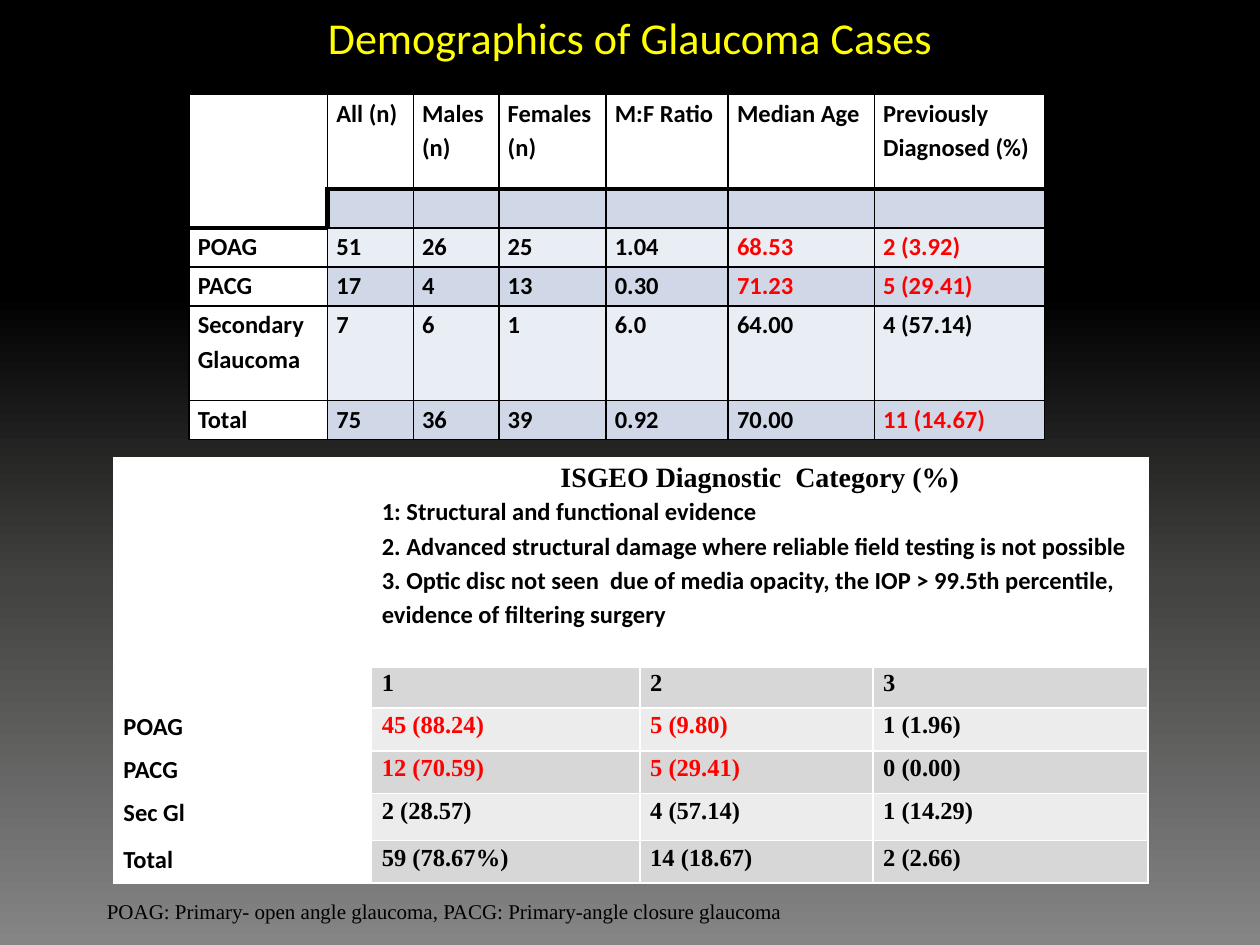
import pptx
import pptx.dml.color
import pptx.enum.text
import pptx.oxml.ns
import pptx.oxml.xmlchemy
import pptx.util
import lxml.etree

Pt = pptx.util.Pt
qn = pptx.oxml.ns.qn
CENTER = pptx.enum.text.PP_ALIGN.CENTER
SANS, SERIF = "Calibri", "Times New Roman"
BLACK, WHITE, RED, YELLOW = "000000", "FFFFFF", "FF0000", "FFFF00"

TITLE = "Demographics of Glaucoma Cases"
FOOTNOTE = "POAG: Primary- open angle glaucoma, PACG: Primary-angle closure glaucoma"
BACKGROUND = [(0, "000000"), (31, "000000"), (62, "434342"), (100, "858585")]

DEMOGRAPHICS = dict(
    box=(108, 54, 489.6, 195.84),
    cols=[79.2, 48.96, 48.96, 61.2, 69.84, 83.52, 97.2],
    heights=[54, 22.32, 22.32, 22.32, 54, 22.32],
    rows=[
        ["", "All (n)", "Males\n(n)", "Females\n(n)", "M:F Ratio", "Median Age",
         "Previously\nDiagnosed (%)"],
        [""] * 7,
        ["POAG", "51", "26", "25", "1.04", "68.53", "2 (3.92)"],
        ["PACG", "17", "4", "13", "0.30", "71.23", "5 (29.41)"],
        ["Secondary Glaucoma", "7", "6", "1", "6.0", "64.00", "4 (57.14)"],
        ["Total", "75", "36", "39", "0.92", "70.00", "11 (14.67)"],
    ],
    red={(2, 5), (2, 6), (3, 5), (3, 6), (5, 6)},
    bands=("D0D8E8", "E9EDF4"), margin=5.04, font=SANS, line=BLACK,
    thick={(1, 0, "B"), (1, 1, "L"), (2, 0, "T")},
    merge=((0, 0), (1, 0)),
)
CATEGORIES = dict(
    box=(64.8, 261.36, 591.84, 241.92),
    cols=[147.6, 153.36, 133.2, 156.96],
    heights=[118.8, 24.48, 24.48, 24.48, 26.64, 24.48],
    rows=[
        ["", "ISGEO Diagnostic  Category (%)\n"
             "1: Structural and functional evidence\n"
             "2. Advanced structural damage where reliable field testing is not possible\n"
             "3. Optic disc not seen  due of media opacity, the IOP > 99.5th percentile, "
             "evidence of filtering surgery", "", ""],
        ["", "1", "2", "3"],
        ["POAG", "45 (88.24)", "5 (9.80)", "1 (1.96)"],
        ["PACG", "12 (70.59)", "5 (29.41)", "0 (0.00)"],
        ["Sec Gl", "2 (28.57)", "4 (57.14)", "1 (14.29)"],
        ["Total", "59 (78.67%)", "14 (18.67)", "2 (2.66)"],
    ],
    red={(2, 1), (2, 2), (3, 1), (3, 2)},
    bands=("D7D7D8", "ECECEC"), margin=5.76, font=SERIF, line=WHITE,
    thick=set(),
    merge=((0, 1), (0, 3)),
)


def rgb(color):
    return pptx.dml.color.RGBColor.from_string(color)


def set_font(p, name, size, color, bold=False):
    p.font.name, p.font.size, p.font.bold = name, Pt(size), bold
    p.font.color.rgb = rgb(color)


def set_background(slide):
    fill = slide.background.fill
    fill.gradient()
    fill.gradient_angle = 270
    stops = next(slide.element.iter(qn("a:gsLst")))
    for stop in list(stops):
        stops.remove(stop)
    for position, color in BACKGROUND:
        stop = lxml.etree.SubElement(stops, qn("a:gs"), pos=str(position * 1000))
        lxml.etree.SubElement(stop, qn("a:srgbClr"), val=color)


def set_borders(cell, color, widths):
    tcPr = cell._tc.get_or_add_tcPr()
    for i, (side, width) in enumerate(widths.items()):
        ln = lxml.etree.Element(qn("a:ln" + side), w=str(Pt(width)))
        solid = lxml.etree.SubElement(ln, qn("a:solidFill"))
        lxml.etree.SubElement(solid, qn("a:srgbClr"), val=color)
        tcPr.insert(i, ln)


def add_table(slide, data):
    rows, cols = data["rows"], data["cols"]
    box = [Pt(v) for v in data["box"]]
    table = slide.shapes.add_table(len(rows), len(cols), *box).table
    table.first_row = table.horz_banding = False
    for column, width in zip(table.columns, cols):
        column.width = Pt(width)
    for row, height in zip(table.rows, data["heights"]):
        row.height = Pt(height)
    for r, texts in enumerate(rows):
        for c, text in enumerate(texts):
            cell = table.cell(r, c)
            cell.margin_left = cell.margin_right = Pt(data["margin"])
            cell.margin_top = cell.margin_bottom = 0
            label = r == 0 or c == 0
            cell.fill.solid()
            cell.fill.fore_color.rgb = rgb(WHITE if label else data["bands"][(r + 1) % 2])
            thick = set(data["thick"]) | {(0, c, "B")}
            if c:
                thick.add((1, c, "T"))
            set_borders(cell, data["line"],
                        {side: 3 if (r, c, side) in thick else 1 for side in "LRTB"})
            cell.text_frame.text = text
            for p in cell.text_frame.paragraphs:
                p.line_spacing = 1.15
                if r:
                    p.space_after = Pt(10)
                set_font(p, SANS if label else data["font"], 14,
                         RED if (r, c) in data["red"] else BLACK, True)
    first, last = data["merge"]
    table.cell(*first).merge(table.cell(*last))
    return table


prs = pptx.Presentation()
prs.slide_width, prs.slide_height = Pt(720), Pt(540)
slide = prs.slides.add_slide(prs.slide_layouts[5])
set_background(slide)

title = slide.shapes.title
title.left, title.top, title.width, title.height = Pt(36), Pt(2.16), Pt(648), Pt(38.16)
title.text_frame.text = TITLE
p = title.text_frame.paragraphs[0]
p.alignment = CENTER
set_font(p, SANS, 25.2, YELLOW)

add_table(slide, DEMOGRAPHICS)

sp = slide.shapes.add_textbox(Pt(54), Pt(509.76), Pt(552.24), Pt(21.6))
tf = sp.text_frame
tf.word_wrap = True
tf.auto_size = pptx.enum.text.MSO_AUTO_SIZE.SHAPE_TO_FIT_TEXT
tf.text = FOOTNOTE
set_font(tf.paragraphs[0], SERIF, 12, BLACK)

categories = add_table(slide, CATEGORIES)
heading = categories.cell(0, 1).text_frame.paragraphs[0]
heading.alignment = CENTER
set_font(heading, SERIF, 16, BLACK, True)

prs.save("out.pptx")
